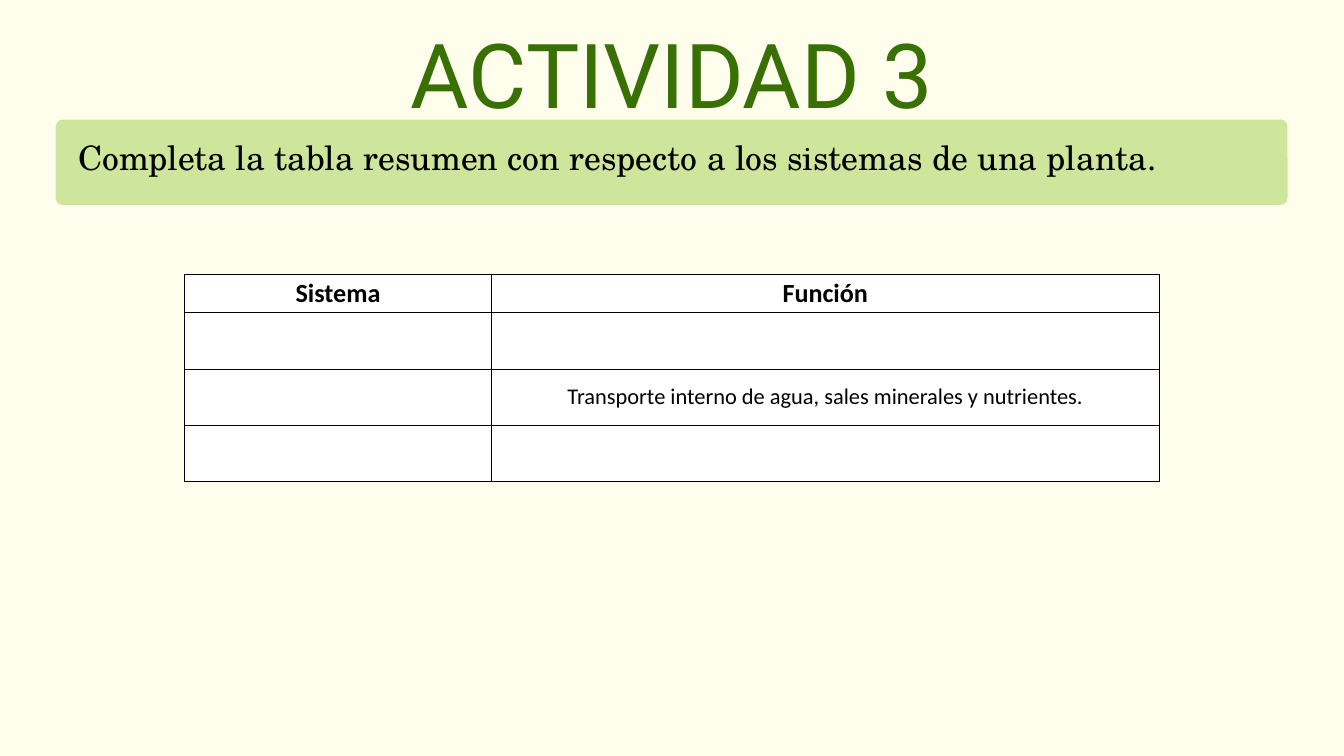
from dataclasses import dataclass

from lxml.etree import SubElement
from pptx import Presentation
from pptx.dml.color import RGBColor as RGB
from pptx.enum.shapes import MSO_SHAPE as Shape
from pptx.enum.text import MSO_ANCHOR as Anchor, PP_ALIGN as Align
from pptx.oxml.ns import qn
from pptx.util import Inches, Pt


@dataclass(frozen=True)
class Theme:
    background: str = "FFFDEB"
    banner: str = "CEE69B"
    title: str = "397004"
    ink: str = "000000"
    cell: str = "FFFFFF"
    title_font: str = "Roboto"
    prompt_font: str = "TeX Gyre Schola"
    table_font: str = "Calibri"
    title_size: int = 96
    prompt_size: int = 36
    header_size: int = 28
    body_size: int = 24


@dataclass(frozen=True)
class Box:
    left: float
    top: float
    width: float
    height: float

    def emu(self) -> tuple:
        return tuple(Inches(v) for v in (self.left, self.top, self.width, self.height))


THEME = Theme()
TITLE = Box(5.93, -0.06, 8.14, 1.81)
BANNER = Box(0.83, 1.78, 18.33, 1.27)
PROMPT = Box(1.17, 2.04, 17.5, 0.61)
TABLE = Box(2.75, 4.09, 14.5, 3.08)
COLUMNS = (4.56, 9.94)
HEADER_HEIGHT = 0.56
ROWS = (
    ("Sistema", "Función"),
    ("", ""),
    ("", "Transporte interno de agua, sales minerales y nutrientes."),
    ("", ""),
)


def write(tf, text: str, *, font: str, size: int, color: str = THEME.ink,
          bold: bool = False, align=Align.CENTER, spacing=None) -> None:
    p = tf.paragraphs[0]
    p.alignment = align
    p.line_spacing = spacing
    r = p.add_run()
    r.text = text
    r.font.name, r.font.size, r.font.bold = font, Pt(size), bold
    r.font.color.rgb = RGB.from_string(color)


def add_text(s, box: Box, text: str, **style) -> None:
    tf = s.shapes.add_textbox(*box.emu()).text_frame
    tf.word_wrap = True
    tf.margin_left = tf.margin_right = tf.margin_top = tf.margin_bottom = 0
    write(tf, text, **style)


def add_banner(s, box: Box) -> None:
    sp = s.shapes.add_shape(Shape.ROUNDED_RECTANGLE, *box.emu())
    sp.adjustments[0] = 0.08
    sp.shadow.inherit = False
    sp.fill.solid()
    sp.fill.fore_color.rgb = RGB.from_string(THEME.banner)
    sp.line.fill.background()


def add_borders(cell) -> None:
    tc_pr = cell._tc.get_or_add_tcPr()
    for i, side in enumerate(("lnL", "lnR", "lnT", "lnB")):
        ln = tc_pr.makeelement(qn(f"a:{side}"), {"w": str(Pt(1))})
        fill = SubElement(ln, qn("a:solidFill"))
        SubElement(fill, qn("a:srgbClr"), val=THEME.ink)
        tc_pr.insert(i, ln)


def add_summary(s, box: Box) -> None:
    table = s.shapes.add_table(len(ROWS), len(COLUMNS), *box.emu()).table
    for column, width in zip(table.columns, COLUMNS):
        column.width = Inches(width)
    body_height = (box.height - HEADER_HEIGHT) / (len(ROWS) - 1)
    for i, texts in enumerate(ROWS):
        header = i == 0
        table.rows[i].height = Inches(HEADER_HEIGHT if header else body_height)
        for j, text in enumerate(texts):
            cell = table.cell(i, j)
            cell.fill.solid()
            cell.fill.fore_color.rgb = RGB.from_string(THEME.cell)
            cell.vertical_anchor = Anchor.MIDDLE
            cell.margin_top = cell.margin_bottom = Inches(0.04)
            add_borders(cell)
            if text:
                write(cell.text_frame, text, font=THEME.table_font, bold=header,
                      size=THEME.header_size if header else THEME.body_size)


def main() -> None:
    """Build the plant systems activity slide."""
    prs = Presentation()
    prs.slide_width, prs.slide_height = Inches(20), Inches(11.25)
    s = prs.slides.add_slide(prs.slide_layouts[6])
    s.background.fill.solid()
    s.background.fill.fore_color.rgb = RGB.from_string(THEME.background)
    add_text(s, TITLE, "ACTIVIDAD 3", font=THEME.title_font, size=THEME.title_size,
             color=THEME.title, spacing=Pt(140))
    add_banner(s, BANNER)
    add_text(s, PROMPT,
             "Completa la tabla resumen con respecto a los sistemas de una planta.",
             font=THEME.prompt_font, size=THEME.prompt_size, align=Align.JUSTIFY)
    add_summary(s, TABLE)
    prs.save("out.pptx")


if __name__ == "__main__":
    main()
